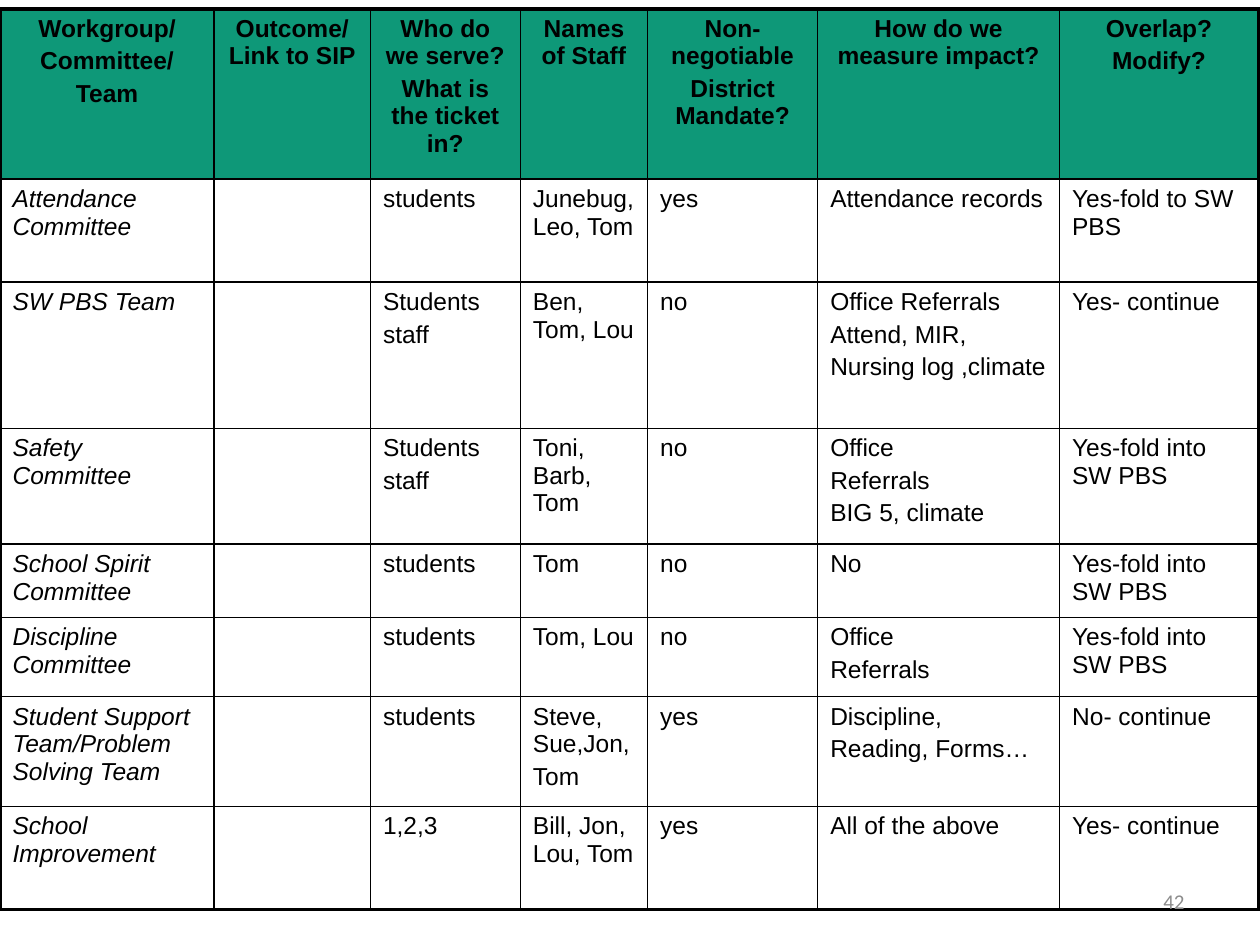
from lxml.etree import SubElement
from pptx import Presentation
from pptx.dml.color import RGBColor
from pptx.enum.text import MSO_ANCHOR, PP_ALIGN
from pptx.oxml.ns import qn
from pptx.util import Inches, Pt

GREEN = RGBColor(0x0E, 0x98, 0x78)
BLACK = RGBColor(0, 0, 0)
GRAY = RGBColor(0x8C, 0x8C, 0x8C)
THIN, THICK = Pt(1), Pt(2.25)

WIDTHS = [1.7, 1.24, 1.19, 1.01, 1.35, 1.92, 1.58]
HEIGHTS = [1.35, 0.82, 1.16, 0.92, 0.58, 0.63, 0.87, 0.82]

# Each line of a cell is its own paragraph
ROWS = [
    ["Workgroup/\nCommittee/\nTeam", "Outcome/Link to SIP",
     "Who do we serve?\nWhat is the ticket in?", "Names of Staff",
     "Non-negotiable\nDistrict Mandate?", "How do we measure impact?",
     "Overlap?\nModify?"],
    ["Attendance Committee", "", "students", "Junebug, Leo, Tom", "yes",
     "Attendance records", "Yes-fold to SW PBS"],
    ["SW PBS Team", "", "Students\nstaff", "Ben, Tom, Lou", "no",
     "Office Referrals\nAttend, MIR,\nNursing log ,climate", "Yes- continue"],
    ["Safety Committee", "", "Students\nstaff", "Toni, Barb, Tom", "no",
     "Office\nReferrals\nBIG 5, climate", "Yes-fold into SW PBS"],
    ["School Spirit Committee", "", "students", "Tom", "no", "No",
     "Yes-fold into SW PBS"],
    ["Discipline Committee", "", "students", "Tom, Lou", "no",
     "Office\nReferrals", "Yes-fold into SW PBS"],
    ["Student Support Team/Problem Solving Team", "", "students",
     "Steve, Sue,Jon,\nTom", "yes", "Discipline,\nReading, Forms…",
     "No- continue"],
    ["School Improvement", "", "1,2,3", "Bill, Jon, Lou, Tom", "yes",
     "All of the above", "Yes- continue"],
]


def add_edge(cell, side, width):
    props = cell._tc.get_or_add_tcPr()
    line = SubElement(props, qn("a:ln" + side), w=str(width))
    fill = SubElement(line, qn("a:solidFill"))
    SubElement(fill, qn("a:srgbClr"), val=str(BLACK))


def style_font(font, name, size, color):
    font.name, font.size = name, Pt(size)
    font.color.rgb = color


prs = Presentation()
prs.slide_width, prs.slide_height = Inches(10), Inches(7.5)
slide = prs.slides.add_slide(prs.slide_layouts[6])

# Table grid
frame = slide.shapes.add_table(len(ROWS), len(WIDTHS), Inches(0), Inches(0.07),
                               Inches(10), Inches(7.14))
table = frame.table
table.first_row = table.horz_banding = False
for col, width in zip(table.columns, WIDTHS):
    col.width = Inches(width)
for row, height in zip(table.rows, HEIGHTS):
    row.height = Inches(height)

# Cells: thick outer frame, green header, italic first column
for r, texts in enumerate(ROWS):
    for c, text in enumerate(texts):
        cell = table.cell(r, c)
        outer = {"L": c == 0, "R": c == len(WIDTHS) - 1,
                 "T": r == 0, "B": r == len(ROWS) - 1}
        for side, edge in outer.items():
            add_edge(cell, side, THICK if edge else THIN)
        if r == 0:
            cell.fill.solid()
            cell.fill.fore_color.rgb = GREEN
        else:
            cell.fill.background()
        cell.text_frame.text = text
        for n, para in enumerate(cell.text_frame.paragraphs):
            para.alignment = PP_ALIGN.CENTER if r == 0 else PP_ALIGN.LEFT
            para.space_before = Pt(2.8 if n else 0)
            for run in para.runs:
                style_font(run.font, "Arial", 14, BLACK)
                run.font.bold = r == 0
                run.font.italic = r > 0 and c == 0

# Page number
box = slide.shapes.add_textbox(Inches(7.17), Inches(6.95),
                               Inches(2.33), Inches(0.4))
box.text_frame.word_wrap = True
box.text_frame.vertical_anchor = MSO_ANCHOR.MIDDLE
box.text_frame.text = "42"
para = box.text_frame.paragraphs[0]
para.alignment = PP_ALIGN.RIGHT
style_font(para.runs[0].font, "Calibri", 12, GRAY)

prs.save("out.pptx")
